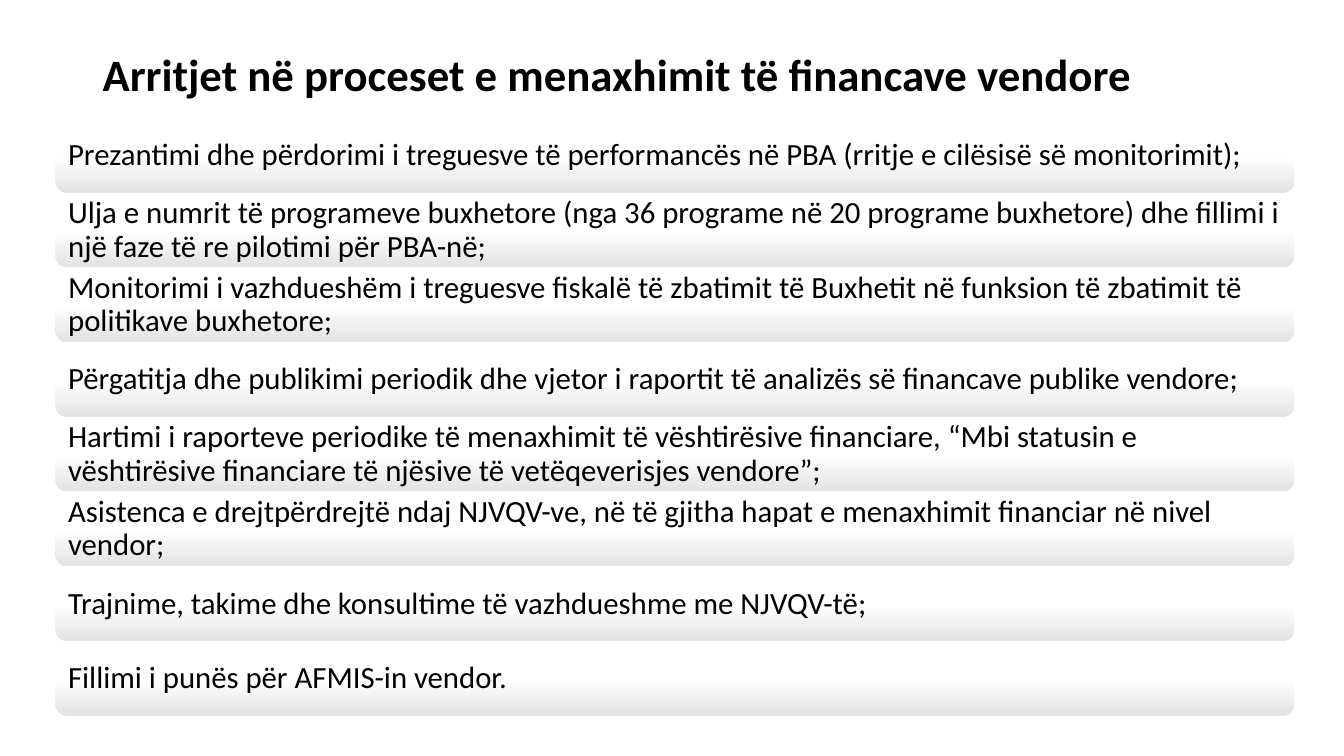
import copy
import pptx
import pptx.dml.color
import pptx.enum.shapes
import pptx.enum.text
import pptx.util

WIDE, HIGH = 13.33, 7.5
COLORS = {"text": "000000", "light": "FFFFFF", "shade": "E3E3E3"}
STOPS = [(0, "light"), (0.5, "light"), (1, "shade")]
HEAD = "Arritjet në proceset e menaxhimit të financave vendore"
ITEMS = [
    "Prezantimi dhe përdorimi i treguesve të performancës në PBA (rritje e cilësisë së monitorimit);",
    "Ulja e numrit të programeve buxhetore (nga 36 programe në 20 programe buxhetore) dhe fillimi i një faze të re pilotimi për PBA-në;",
    "Monitorimi i vazhdueshëm i treguesve fiskalë të zbatimit të Buxhetit në funksion të zbatimit të politikave buxhetore;",
    "Përgatitja dhe publikimi periodik dhe vjetor i raportit të analizës së financave publike vendore;",
    "Hartimi i raporteve periodike të menaxhimit të vështirësive financiare, “Mbi statusin e vështirësive financiare të njësive të vetëqeverisjes vendore”;",
    "Asistenca e drejtpërdrejtë ndaj NJVQV-ve, në të gjitha hapat e menaxhimit financiar në nivel vendor;",
    "Trajnime, takime dhe konsultime të vazhdueshme me NJVQV-të;",
    "Fillimi i punës për AFMIS-in vendor.",
]


def color(name):
    return pptx.dml.color.RGBColor.from_string(COLORS[name])


def inches(box):
    return [pptx.util.Inches(size) for size in box]


def put(target, values):
    for name, value in values.items():
        setattr(target, name, value)


def write(shape, text, size, inset, bold=False):
    frame = shape.text_frame
    side = pptx.util.Inches(inset)
    put(frame, {"word_wrap": True, "margin_left": side, "margin_right": side,
                "margin_top": 0, "margin_bottom": 0,
                "vertical_anchor": pptx.enum.text.MSO_ANCHOR.MIDDLE})
    para = frame.paragraphs[0]
    put(para, {"line_spacing": 0.9, "alignment": pptx.enum.text.PP_ALIGN.LEFT})
    run = para.add_run()
    run.text = text
    put(run.font, {"name": "Calibri", "size": pptx.util.Pt(size), "bold": bold})
    run.font.color.rgb = color("text")


def shade(shape):
    """Fill from light at the top to the shade at the foot."""
    shape.fill.gradient()
    shape.fill.gradient_angle = 270
    first = shape._element.spPr.xpath(".//a:gs")[0]
    first.addnext(copy.deepcopy(first))
    for stop, (place, name) in zip(shape.fill.gradient_stops, STOPS):
        stop.position = place
        stop.color.rgb = color(name)


def title(slide, box):
    write(slide.shapes.add_textbox(*inches(box)), HEAD, 32, 0.1, True)


def rows(slide, box):
    """Stack one bar per item, with an equal step, in the box."""
    left, top, width, height = box
    gap = 0.01
    step = (height + gap) / len(ITEMS)
    kind = pptx.enum.shapes.MSO_SHAPE.ROUNDED_RECTANGLE
    for index, text in enumerate(ITEMS):
        place = inches((left, top + index * step, width, step - gap))
        bar = slide.shapes.add_shape(kind, *place)
        bar.shadow.inherit = False
        bar.line.fill.background()
        shade(bar)
        write(bar, text, 22, 0.09)


def main():
    deck = pptx.Presentation()
    put(deck, {"slide_width": pptx.util.Inches(WIDE),
               "slide_height": pptx.util.Inches(HIGH)})
    slide = deck.slides.add_slide(deck.slide_layouts[6])
    title(slide, (0.92, 0.4, 11.5, 0.73))
    rows(slide, (0.55, 1.18, 12.29, 5.92))
    deck.save("out.pptx")


if __name__ == "__main__":
    main()
